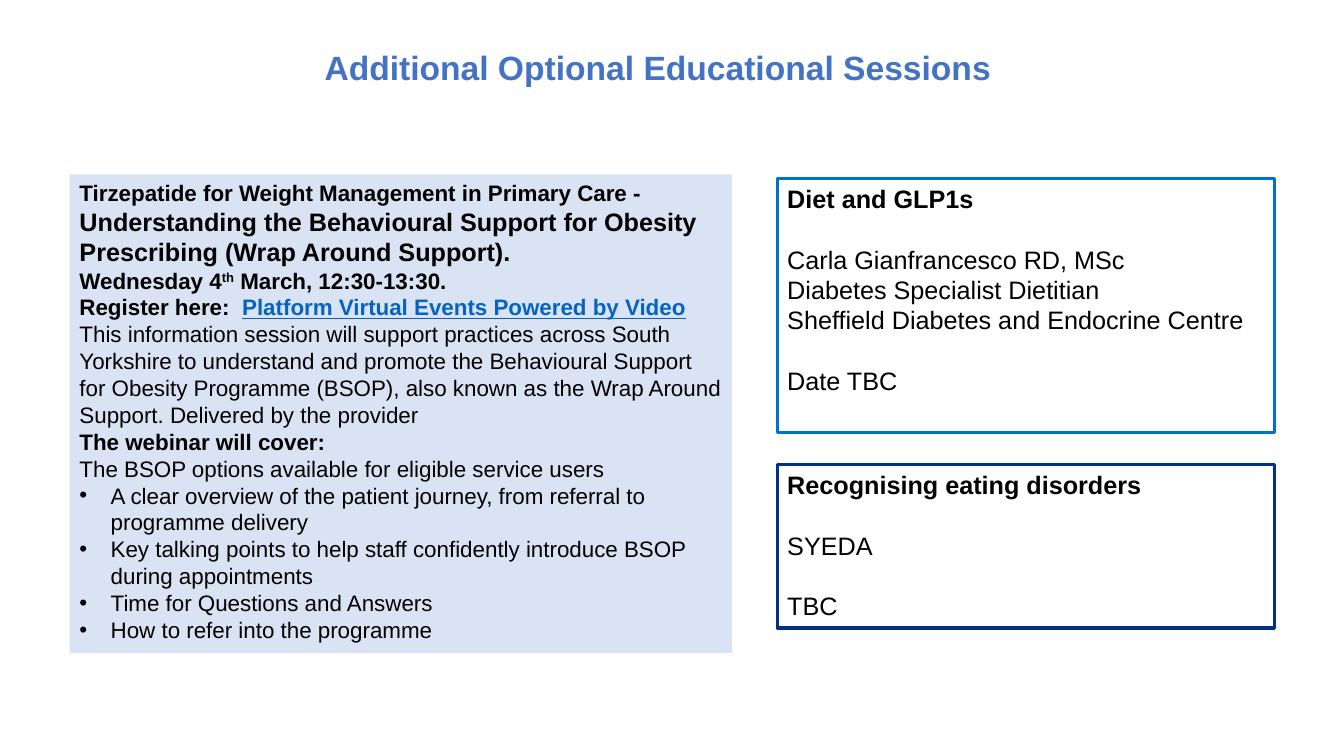
from lxml import etree
from pptx import Presentation
from pptx.dml.color import RGBColor
from pptx.enum import shapes, text
from pptx.oxml import ns
from pptx.util import Inches, Pt

BLACK = RGBColor(0x00, 0x00, 0x00)
TITLE_BLUE = RGBColor(0x44, 0x72, 0xC4)
LINK_BLUE = RGBColor(0x05, 0x63, 0xC1)
PALE_BLUE = RGBColor(0xDA, 0xE3, 0xF3)
BRIGHT_BLUE = RGBColor(0x00, 0x72, 0xCE)
NAVY = RGBColor(0x00, 0x30, 0x87)

BODY = {"name": "Arial", "size": Pt(16), "bold": False}
BOLD = {**BODY, "bold": True}
LARGE = {**BODY, "size": Pt(18)}
LARGE_BOLD = {**LARGE, "bold": True}
HEADING = {**BOLD, "size": Pt(24)}
LINK = {**BOLD, "underline": True}
GAP = Pt(21.6)
BULLET_INDENT = Inches(0.31)

title = "Additional Optional Educational Sessions"

webinar = [
    [("Tirzepatide for Weight Management in Primary Care - ", BOLD),
     ("Understanding the Behavioural Support for Obesity Prescribing (Wrap Around Support).", LARGE_BOLD)],
    [("Wednesday 4", BOLD), ("th", BOLD, BLACK, 30), (" March, 12:30-13:30.", BOLD)],
    [("Register here:  ", BOLD),
     ("Platform Virtual Events Powered by Video", LINK, LINK_BLUE)],
    [("This information session will support practices across South Yorkshire to understand and "
      "promote the Behavioural Support for Obesity Programme (BSOP), also known as the Wrap Around "
      "Support. Delivered by the provider", BODY)],
    [("The webinar will cover:", BOLD)],
    [("The BSOP options available for eligible service users", BODY)],
]
webinar_topics = [
    "A clear overview of the patient journey, from referral to programme delivery",
    "Key talking points to help staff confidently introduce BSOP during appointments",
    "Time for Questions and Answers",
    "How to refer into the programme",
]

sessions = [
    {"top": 1.77, "height": 2.52, "outline": BRIGHT_BLUE, "name": "Diet and GLP1s",
     "details": [["Carla Gianfrancesco RD, MSc", "Diabetes Specialist Dietitian",
                  "Sheffield Diabetes and Endocrine Centre"], ["Date TBC"]]},
    {"top": 4.61, "height": 1.62, "outline": NAVY, "name": "Recognising eating disorders",
     "details": [["SYEDA"], ["TBC"]]},
]


def next_paragraph(frame):
    return frame.add_paragraph() if frame.paragraphs[0].runs else frame.paragraphs[0]


def add_words(paragraph, words, style, colour=BLACK, raised=0):
    run = paragraph.add_run()
    run.text = words
    for key, value in style.items():
        setattr(run.font, key, value)
    run.font.color.rgb = colour
    if raised:
        run.font._element.set("baseline", str(raised * 1000))


def add_bullet(paragraph):
    properties = paragraph._p.get_or_add_pPr()
    properties.set("marL", str(BULLET_INDENT))
    properties.set("indent", str(-BULLET_INDENT))
    etree.SubElement(properties, ns.qn("a:buFont")).set("typeface", "Arial")
    etree.SubElement(properties, ns.qn("a:buChar")).set("char", "•")


def add_panel(left, top, width, height, fill=None, outline=None):
    panel = slide.shapes.add_shape(shapes.MSO_SHAPE.RECTANGLE, Inches(left), Inches(top),
                                   Inches(width), Inches(height))
    panel.shadow.inherit = False
    if fill is None:
        panel.fill.background()
    else:
        panel.fill.solid()
        panel.fill.fore_color.rgb = fill
    if outline is None:
        panel.line.fill.background()
    else:
        panel.line.color.rgb = outline
        panel.line.width = Pt(2.25)
    panel.text_frame.word_wrap = True
    panel.text_frame.vertical_anchor = text.MSO_ANCHOR.TOP
    return panel.text_frame


def add_line(frame, runs, before=0, bulleted=False):
    paragraph = next_paragraph(frame)
    if bulleted:
        add_bullet(paragraph)
    paragraph.alignment = text.PP_ALIGN.LEFT
    if before:
        paragraph.space_before = before
    for run in runs:
        add_words(paragraph, *run)


deck = Presentation()
deck.slide_width, deck.slide_height = Inches(13.33), Inches(7.5)
slide = deck.slides.add_slide(deck.slide_layouts[6])

heading = slide.shapes.add_textbox(Inches(3.12), Inches(0.42), Inches(8.99), Inches(0.5)).text_frame
heading.word_wrap = True
add_line(heading, [(title, HEADING, TITLE_BLUE)])

webinar_panel = add_panel(0.69, 1.73, 6.57, 4.75, fill=PALE_BLUE)
for runs in webinar:
    add_line(webinar_panel, runs)
for topic in webinar_topics:
    add_line(webinar_panel, [(topic, BODY)], bulleted=True)

for session in sessions:
    session_panel = add_panel(7.71, session["top"], 4.93, session["height"],
                              outline=session["outline"])
    add_line(session_panel, [(session["name"], LARGE_BOLD)])
    for group in session["details"]:
        for position, detail in enumerate(group):
            add_line(session_panel, [(detail, LARGE)], before=0 if position else GAP)

deck.save("out.pptx")
